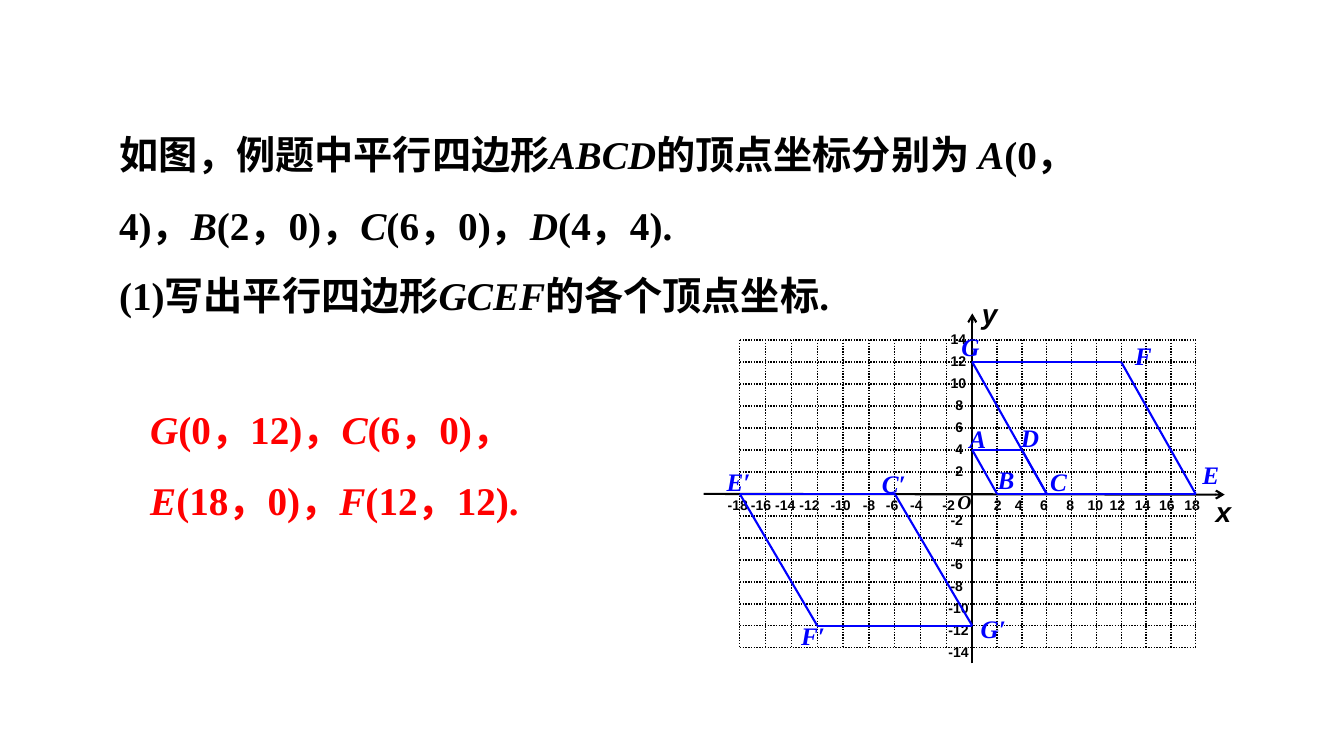
from lxml.etree import SubElement
from pptx import Presentation
from pptx.dml.color import RGBColor as RGB
from pptx.enum.dml import MSO_LINE as Dash
from pptx.enum.shapes import MSO_CONNECTOR as Connector
from pptx.enum.text import MSO_ANCHOR as Anchor, MSO_AUTO_SIZE as AutoSize, PP_ALIGN as Align
from pptx.oxml.ns import qn
from pptx.util import Pt

COLORS = {"ink": "000000", "figure": "0000FF", "answer": "FF0000"}
ORIGIN_X, ORIGIN_Y = 694.5, 352.8
STEP_LEFT, STEP_RIGHT, STEP_Y = 18.45, 17.73, 15.7

QUESTION = [
    "如图，例题中平行四边形*ABCD*的顶点坐标分别为* A*(0，4)，*B*(2，0)，*C*(6，0)，*D*(4，4).",
    "(1)写出平行四边形*GCEF*的各个顶点坐标.",
]
ANSWER = ["*G*(0，12)，*C*(6，0)，", "*E*(18，0)，*F*(12，12)."]

VERTICES = {
    "A": (0, 4), "B": (2, 0), "C": (6, 0), "D": (4, 4),
    "E": (18, 0), "F": (12, 12), "G": (0, 12),
    "C′": (-6, 0), "E′": (-18, 0), "F′": (-12, -12), "G′": (0, -12),
}
PARALLELOGRAMS = [("A", "B", "C", "D"), ("G", "C", "E", "F"), ("G′", "C′", "E′", "F′")]
VERTEX_LABELS = {
    "A": (685.4, 298.8), "B": (705.6, 328.3), "C": (743, 329.8), "D": (722.2, 298.1),
    "E": (851.8, 324.7), "F": (803.5, 239.8), "G": (679.7, 233.3),
    "C′": (622.8, 331.2), "E′": (511.9, 329.8), "F′": (565.2, 439.9), "G′": (693.4, 434.2),
}
X_LABELS = {
    -18: 519.8, -16: 536.4, -14: 553.7, -12: 571, -10: 593.3, -8: 616.3, -6: 632.9,
    -4: 650.2, -2: 673.2, 2: 709.9, 4: 725, 6: 743, 8: 761.8, 10: 776.9, 12: 792.7,
    14: 810.7, 16: 828, 18: 846,
}
Y_LABEL_LEFT = {1: 682.5, 2: 679, 3: 677.5}


def grid_point(x, y):
    """Return the slide position in points of a coordinate pair."""
    step = STEP_LEFT if x < 0 else STEP_RIGHT
    return ORIGIN_X + x / 2 * step, ORIGIN_Y - y / 2 * STEP_Y


class SlidePainter:
    """Draw styled elements on one slide, with lengths in points."""

    def __init__(self, slide):
        """Keep the slide to draw on."""
        self.slide = slide

    def style(self, font, size, color, face, italic=None):
        """Apply bold type in one face, size and colour."""
        font.name, font.size, font.bold, font.italic = face, Pt(size), True, italic
        font.color.rgb = RGB.from_string(COLORS[color])

    def passage(self, holder, box, paragraphs, color):
        """Fill a placeholder with paragraphs whose starred parts are italic."""
        holder.left, holder.top, holder.width, holder.height = map(Pt, box)
        frame = holder.text_frame
        frame.word_wrap, frame.auto_size = True, AutoSize.NONE
        frame.vertical_anchor = Anchor.TOP
        for index, content in enumerate(paragraphs):
            paragraph = frame.add_paragraph() if index else frame.paragraphs[0]
            paragraph.alignment, paragraph.line_spacing = Align.LEFT, 1.5
            paragraph.space_before = Pt(0)
            self.style(paragraph.font, 28, color, "Times New Roman")
            properties = paragraph._p.get_or_add_pPr()
            properties.set("marL", "0")
            properties.set("indent", "0")
            bullet = properties.makeelement(qn("a:buNone"), {})
            properties.find(qn("a:defRPr")).addprevious(bullet)
            for part, words in enumerate(content.split("*")):
                if words:
                    run = paragraph.add_run()
                    run.text, run.font.italic = words, part % 2 == 1

    def label(self, words, left, top, size, color="ink", face="Arial",
              italic=False, width=20, inset=(0, 0)):
        """Add a one-line label."""
        height = size * 1.2 + 2 * inset[1]
        box = self.slide.shapes.add_textbox(Pt(left), Pt(top), Pt(width), Pt(height))
        frame = box.text_frame
        frame.word_wrap = True
        frame.margin_left = frame.margin_right = Pt(inset[0])
        frame.margin_top = frame.margin_bottom = Pt(inset[1])
        paragraph = frame.paragraphs[0]
        paragraph.text = words
        self.style(paragraph.font, size, color, face, italic)

    def point_name(self, words, left, top, size=18, color="figure", width=30):
        """Add the italic name of a point."""
        self.label(words, left, top, size, color, "Times New Roman", True, width, (7.2, 3.6))

    def line(self, start, end, color="ink", width=1.5, dotted=False, arrow=False):
        """Add a straight line, dotted or with an arrowhead on request."""
        link = self.slide.shapes.add_connector(Connector.STRAIGHT, *map(Pt, (*start, *end)))
        link.line.color.rgb = RGB.from_string(COLORS[color])
        link.line.width = Pt(width)
        if dotted:
            link.line.dash_style = Dash.ROUND_DOT
        if arrow:
            SubElement(link.line._get_or_add_ln(), qn("a:tailEnd"), type="arrow")
        SubElement(link._element.spPr, qn("a:effectLst"))


def draw_grid(painter):
    """Draw the dotted grid, the axes and their numbers."""
    for x in range(-18, 19, 2):
        if x:
            painter.line(grid_point(x, 14), grid_point(x, -14), width=1, dotted=True)
            painter.label(str(x), X_LABELS[x], 354.6, 10)
    for y in range(-14, 15, 2):
        if y:
            painter.line(grid_point(-18, y), grid_point(18, y), width=1, dotted=True)
            top = grid_point(0, y)[1] - (6.5 if y > 0 else 3)
            painter.label(str(y), Y_LABEL_LEFT[len(str(y))], top, 10)
    painter.line((502.6, ORIGIN_Y), (874.8, ORIGIN_Y + 0.5), arrow=True)
    painter.line((ORIGIN_X, 473.8), (ORIGIN_X, 223.9), arrow=True)
    painter.label("y", 701.3, 211.7, 20, italic=True)
    painter.label("x", 868.3, 353.5, 20, italic=True)
    painter.point_name("O", 676.8, 346.3, 14, "ink")


def draw_parallelograms(painter):
    """Draw the three parallelograms and name their vertices."""
    for corners in PARALLELOGRAMS:
        for first, second in zip(corners, corners[1:] + corners[:1]):
            painter.line(grid_point(*VERTICES[first]), grid_point(*VERTICES[second]), "figure")
    for name, (left, top) in VERTEX_LABELS.items():
        painter.point_name(name, left, top, width=30 if len(name) == 1 else 40)


def main():
    """Build and save the slide."""
    deck = Presentation()
    deck.slide_width, deck.slide_height = Pt(960), Pt(540)
    slide = deck.slides.add_slide(deck.slide_layouts[1])
    painter = SlidePainter(slide)
    draw_grid(painter)
    draw_parallelograms(painter)
    question, answer = slide.placeholders
    painter.passage(question, (77.8, 72.7, 725, 153.4), QUESTION, "ink")
    painter.passage(answer, (100.1, 269.3, 380.2, 103), ANSWER, "answer")
    deck.save("out.pptx")


if __name__ == "__main__":
    main()
